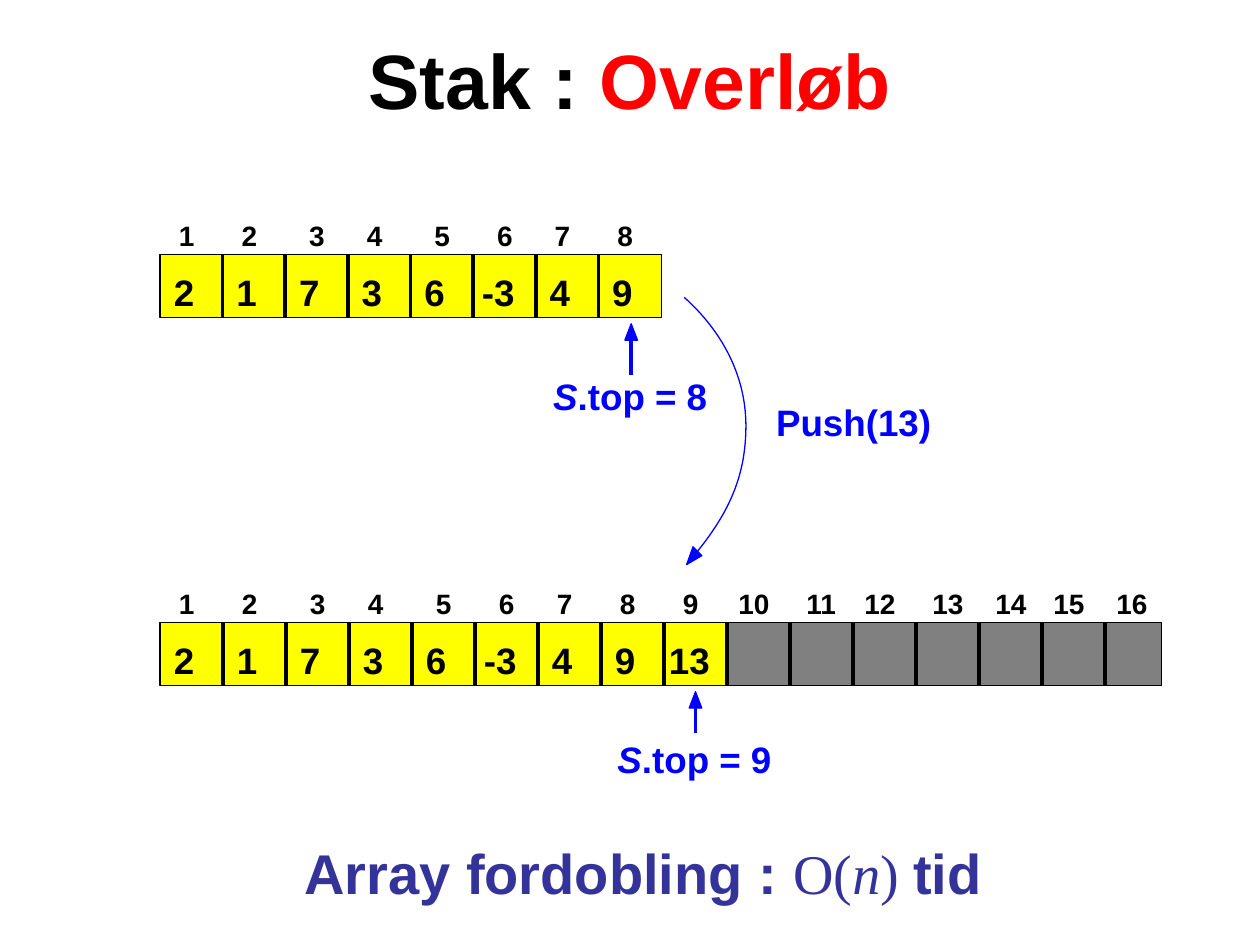
import pptx
import pptx.util
import pptx.dml.color
import pptx.enum.shapes
import pptx.enum.text
import pptx.oxml.ns
import lxml.etree

Inches = pptx.util.Inches
ALIGN = pptx.enum.text.PP_ALIGN
ANCHOR = pptx.enum.text.MSO_ANCHOR

BLACK, BLUE, RED, NAVY = "000000", "0000FF", "FF0000", "333399"
YELLOW, GREY = "FFFF00", "808080"

TITLE = [("Stak : ", {}), ("Overløb", {"color": RED})]
SERIF = {"name": "Times New Roman", "bold": False}
CONCLUSION = [("Array fordobling : ", {}), ("O(", SERIF),
              ("n", {**SERIF, "italic": True}), (") ", SERIF), ("tid ", {})]

VALUES = ["2", "1", "7", "3", "6", "-3", "4", "9"]
ARRAYS = [
    {"top": 2.02, "cell": 0.497, "width": 3.98, "slots": 8, "values": VALUES,
     "pointer": (5.01, 2.57, 2.98), "label": (4.39, 2.965), "size": "8"},
    {"top": 4.94, "cell": 0.5, "width": 7.95, "slots": 16, "values": VALUES + ["13"],
     "pointer": (5.52, 5.49, 5.82), "label": (4.9, 5.845), "size": "9"},
]
ARRAY_LEFT, CELL_HEIGHT = 1.27, 0.5
NUDGED = {3, 5, 6, 11, 13, 14}
VALUE_INSET = {"-3": 0.07, "13": 0.04}

ARC = [
    [(5.43, 2.36), (5.7, 2.6), (5.92, 2.95), (5.92, 3.38)],
    [(5.92, 3.38), (5.92, 3.85), (5.73, 4.15), (5.45, 4.48)],
]
ARC_HEAD = [(5.57, 4.41), (5.45, 4.48), (5.5, 4.34)]


def rgb(color):
    return pptx.dml.color.RGBColor.from_string(color)


def set_line(shape, color):
    shape.line.color.rgb = rgb(color)
    shape.line.width = 0


def write(para, runs, size, color, align):
    para.alignment = align
    para.font.size = pptx.util.Pt(size)
    para.font.name = "Arial"
    para.font.bold = True
    para.font.color.rgb = rgb(color)
    for text, style in runs:
        span = para.add_run()
        span.text = text
        for key, value in style.items():
            if key == "color":
                span.font.color.rgb = rgb(value)
            else:
                setattr(span.font, key, value)


def add_label(page, left, top, width, runs, size, color=BLACK):
    box = page.shapes.add_textbox(Inches(left), Inches(top), Inches(width), Inches(size / 60))
    frame = box.text_frame
    frame.word_wrap = True
    frame.margin_left = frame.margin_right = frame.margin_top = frame.margin_bottom = 0
    write(frame.paragraphs[0], runs, size, color, ALIGN.LEFT)


def add_bar(page, left, top, width, color):
    bar = page.shapes.add_shape(pptx.enum.shapes.MSO_SHAPE.RECTANGLE, Inches(left),
                                Inches(top), Inches(width), Inches(CELL_HEIGHT))
    bar.shadow.inherit = False
    bar.fill.solid()
    bar.fill.fore_color.rgb = rgb(color)
    set_line(bar, BLACK)


def add_line(page, x1, y1, x2, y2, color):
    line = page.shapes.add_connector(pptx.enum.shapes.MSO_CONNECTOR.STRAIGHT,
                                     Inches(x1), Inches(y1), Inches(x2), Inches(y2))
    set_line(line, color)
    lxml.etree.SubElement(line._element.spPr, pptx.oxml.ns.qn("a:effectLst"))


def add_outline(page, points, closed):
    points = [(Inches(x), Inches(y)) for x, y in points]
    builder = page.shapes.build_freeform(*points[0], scale=1.0)
    builder.add_line_segments(points[1:], close=closed)
    shape = builder.convert_to_shape()
    shape.shadow.inherit = False
    if closed:
        shape.fill.solid()
        shape.fill.fore_color.rgb = rgb(BLUE)
    else:
        shape.fill.background()
    set_line(shape, BLUE)


def bezier(a, b, c, d, steps=30):
    for step in range(steps + 1):
        t = step / steps
        u = 1 - t
        yield tuple(u**3 * p + 3 * u * u * t * q + 3 * u * t * t * r + t**3 * s
                    for p, q, r, s in zip(a, b, c, d))


def add_array(page, array):
    top, cell, width = array["top"], array["cell"], array["width"]
    values = array["values"]
    add_bar(page, ARRAY_LEFT, top, width, YELLOW)
    if len(values) < array["slots"]:
        used = len(values) * cell
        add_bar(page, ARRAY_LEFT + used, top, width - used, GREY)
    for slot in range(array["slots"]):
        left = ARRAY_LEFT + slot * cell
        number = slot + 1
        if slot:
            add_line(page, left, top + CELL_HEIGHT, left, top, BLACK)
        inset = (0.15 if number < 10 else 0.09) + (0.04 if number in NUDGED else 0)
        add_label(page, left + inset, top - 0.285, 0.32, [(str(number), {})], 16)
        if slot < len(values):
            value = values[slot]
            add_label(page, left + VALUE_INSET.get(value, 0.11), top + 0.12, 0.43,
                      [(value, {})], 21)
    x, tip, tail = array["pointer"]
    add_line(page, x, tail, x, tip + 0.08, BLUE)
    add_outline(page, [(x - 0.05, tip + 0.13), (x, tip), (x + 0.05, tip + 0.13)], True)
    add_label(page, *array["label"], 1.35,
              [("S", {"italic": True}), (f".top = {array['size']}", {})], 21, BLUE)


def main():
    deck = pptx.Presentation()
    deck.slide_width, deck.slide_height = Inches(10), Inches(7.5)
    page = deck.slides.add_slide(deck.slide_layouts[5])

    title = page.shapes.title
    title.left, title.top, title.width, title.height = map(Inches, (0.5, 0, 9, 1.25))
    title.text_frame.vertical_anchor = ANCHOR.MIDDLE
    write(title.text_frame.paragraphs[0], TITLE, 44, BLACK, ALIGN.CENTER)

    for array in ARRAYS:
        add_array(page, array)

    add_outline(page, [point for curve in ARC for point in bezier(*curve)], False)
    add_outline(page, ARC_HEAD, True)
    add_label(page, 6.16, 3.175, 1.4, [("Push(13)", {})], 21, BLUE)

    box = page.shapes.add_textbox(Inches(1.08), Inches(6.61), Inches(8.17), Inches(0.63))
    box.text_frame.word_wrap = True
    write(box.text_frame.paragraphs[0], CONCLUSION, 32, NAVY, ALIGN.CENTER)

    deck.save("out.pptx")


if __name__ == "__main__":
    main()
